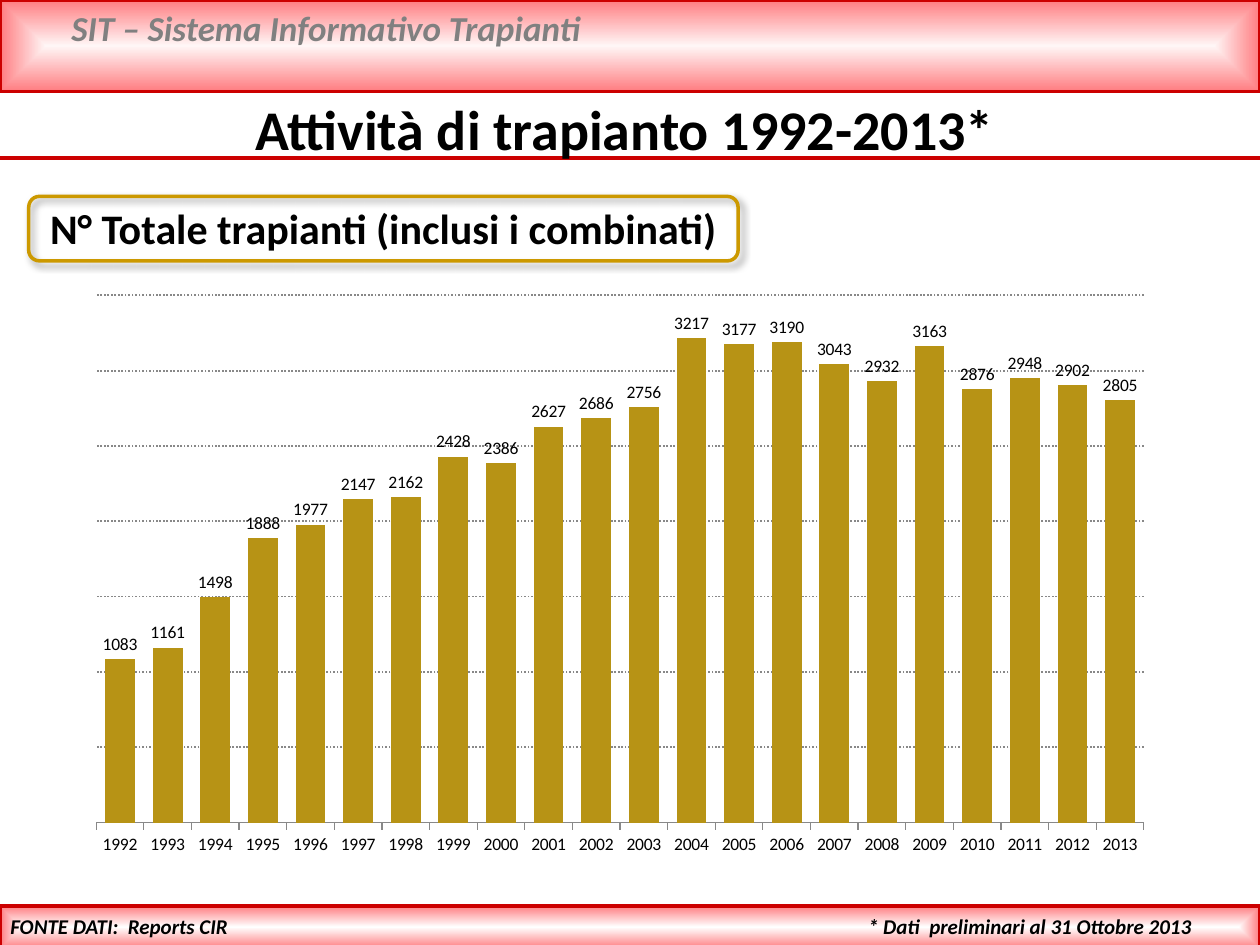
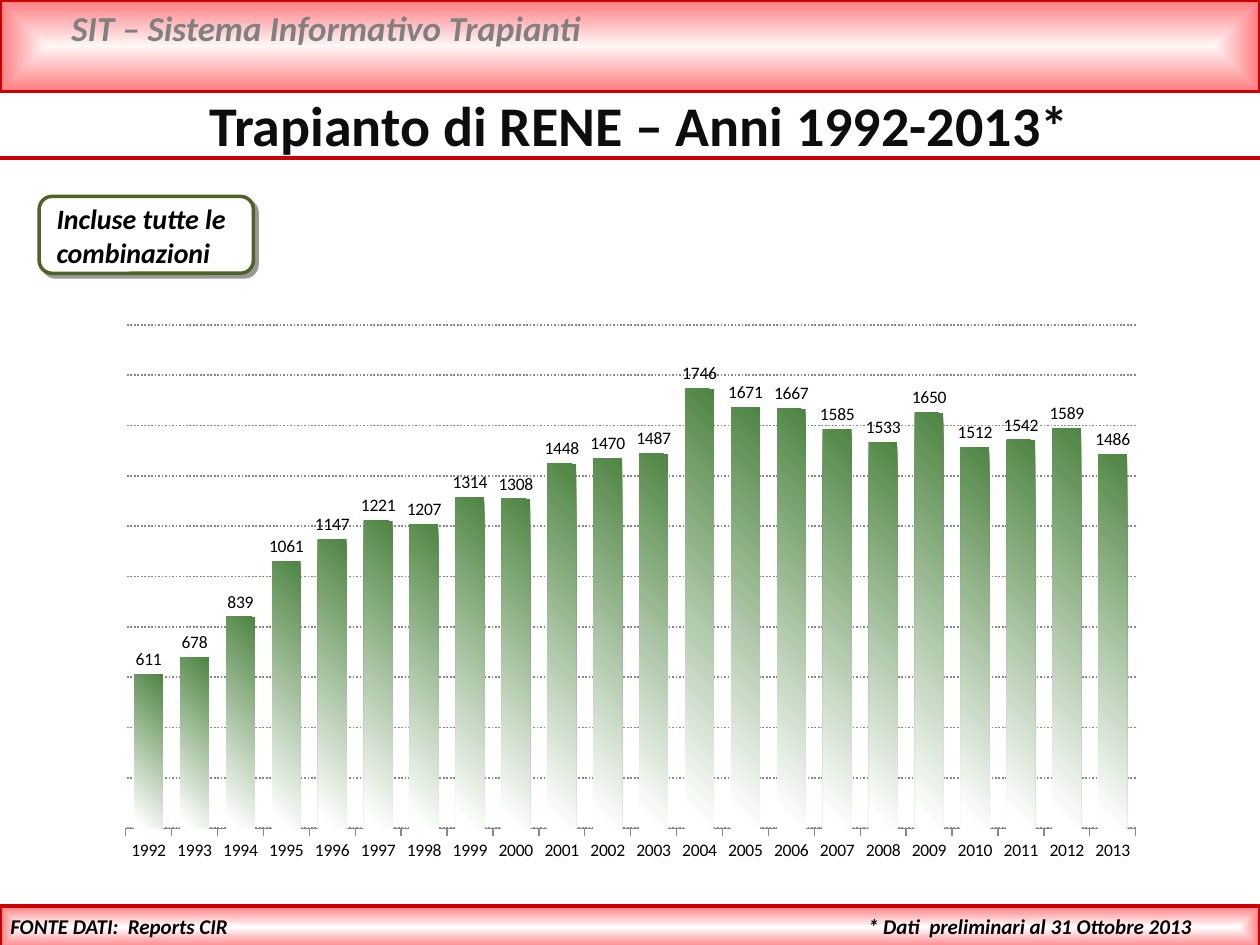
from lxml import etree
from pptx import Presentation
from pptx.chart import data as cd
from pptx.dml.color import RGBColor
from pptx.enum import chart as ch, dml, shapes, text
from pptx.oxml import ns, parse_xml
from pptx.util import Cm, Pt

WIDTH, HEIGHT = 25.4, 19.05
FONT = "Calibri"
RED, ROSE, BLUSH, WHITE = "CC0000", "FF7C80", "FFF6F6", "FFFFFF"
BLACK, INK, GREY, GRID = "000000", "0D0D0D", "808080", "888888"
GOLD, BAR_GOLD, OLIVE, BAR_GREEN = "CC9900", "B79315", "4F6228", "4E8542"
FOOTER_TOP = 18.26
YEARS = [str(year) for year in range(1992, 2014)]
TOTALS = [1083, 1161, 1498, 1888, 1977, 2147, 2162, 2428, 2386, 2627, 2686,
          2756, 3217, 3177, 3190, 3043, 2932, 3163, 2876, 2948, 2902, 2805]
KIDNEYS = [611, 678, 839, 1061, 1147, 1221, 1207, 1314, 1308, 1448, 1470,
           1487, 1746, 1671, 1667, 1585, 1533, 1650, 1512, 1542, 1589, 1486]


def rgb(value):
    return RGBColor.from_string(value)


def cm(box):
    return [Cm(length) for length in box]


def set_line(line, color, width=2):
    line.color.rgb = rgb(color)
    line.width = Pt(width)


def set_gradient(fill, start, end, end_position=1.0):
    fill.gradient()
    for stop, color, position in zip(fill.gradient_stops, (start, end), (0, end_position)):
        stop.color.rgb = rgb(color)
        stop.position = position


def add_text(s, box, words, size, color=BLACK, italic=False, align=None, wrap=True):
    tf = s.shapes.add_textbox(*cm(box)).text_frame
    tf.word_wrap = wrap
    p = tf.paragraphs[0]
    p.text = words
    p.alignment = align
    p.font.name, p.font.size = FONT, Pt(size)
    p.font.bold, p.font.italic = True, italic
    p.font.color.rgb = rgb(color)


def add_band(s, box, center):
    sp = s.shapes.add_shape(shapes.MSO_SHAPE.RECTANGLE, *cm(box))
    sp.shadow.inherit = False
    set_gradient(sp.fill, center, ROSE)
    set_line(sp.line, RED)
    gradient = sp._element.spPr.find(ns.qn("a:gradFill"))
    gradient.replace(gradient.find(ns.qn("a:lin")), parse_xml(
        f'<a:path {ns.nsdecls("a")} path="shape">'
        '<a:fillToRect l="50000" t="50000" r="50000" b="50000"/></a:path>'))


def add_header(s):
    add_band(s, (0, 0, WIDTH, 1.85), BLUSH)
    add_text(s, (1.19, 0, 22.81, 1.12), "SIT – Sistema Informativo Trapianti", 20, GREY, True)
    rule = s.shapes.add_connector(shapes.MSO_CONNECTOR.STRAIGHT, *cm((0, 3.18, WIDTH, 3.18)))
    set_line(rule.line, RED)
    etree.SubElement(rule._element.spPr, ns.qn("a:effectLst"))


def add_footer(s):
    add_band(s, (0, FOOTER_TOP, WIDTH, 0.86), WHITE)
    top = FOOTER_TOP + 0.03
    add_text(s, (17.25, top, 8.15, 0.76), "* Dati  preliminari al 31 Ottobre 2013", 12, italic=True)
    add_text(s, (-0.1, top, 4.95, 0.76), "FONTE DATI:  Reports CIR", 12, italic=True,
             align=text.PP_ALIGN.RIGHT, wrap=False)


def add_frame(s, box, color, fill=None, blur=0):
    sp = s.shapes.add_shape(shapes.MSO_SHAPE.ROUNDED_RECTANGLE, *cm(box))
    sp.shadow.inherit = False
    if fill:
        sp.fill.solid()
        sp.fill.fore_color.rgb = rgb(fill)
    else:
        sp.fill.background()
    set_line(sp.line, color)
    sp._element.spPr.find(ns.qn("a:effectLst")).append(parse_xml(
        f'<a:outerShdw {ns.nsdecls("a")} blurRad="{Pt(blur)}" dist="{Pt(3)}" dir="2700000" '
        f'algn="tl" rotWithShape="0"><a:srgbClr val="{BLACK}"><a:alpha val="40000"/>'
        '</a:srgbClr></a:outerShdw>'))


def add_year_chart(s, box, values, top_value, step):
    data = cd.CategoryChartData()
    data.categories = YEARS
    data.add_series("Trapianti", values)
    chart = s.shapes.add_chart(ch.XL_CHART_TYPE.COLUMN_CLUSTERED, *cm(box), data).chart
    chart.has_title = chart.has_legend = False
    chart.font.name, chart.font.size = FONT, Pt(10)
    chart.font.color.rgb = rgb(BLACK)

    axis = chart.value_axis
    axis.visible = False
    axis.minimum_scale, axis.maximum_scale, axis.major_unit = 0, top_value, step
    axis.has_major_gridlines = True
    grid = axis.major_gridlines.format.line
    set_line(grid, GRID, 1)
    grid.dash_style = dml.MSO_LINE.ROUND_DOT
    years = chart.category_axis
    years.major_tick_mark = ch.XL_TICK_MARK.OUTSIDE
    set_line(years.format.line, GRID, 0.75)

    plot = chart.plots[0]
    plot.gap_width, plot.overlap, plot.vary_by_categories = 60, -20, False
    plot.has_data_labels = True
    plot.data_labels.show_value = True
    plot.data_labels.position = ch.XL_LABEL_POSITION.OUTSIDE_END

    area = chart._chartSpace.find(".//" + ns.qn("c:plotArea"))
    for layout in area.findall(ns.qn("c:layout")):
        area.remove(layout)
    sizes = "".join(f'<c:{key} val="{share}"/>'
                    for key, share in (("x", 0.02), ("y", 0.02), ("w", 0.96), ("h", 0.9)))
    area.insert(0, parse_xml(
        f'<c:layout {ns.nsdecls("c")}><c:manualLayout><c:layoutTarget val="inner"/>'
        f'<c:xMode val="edge"/><c:yMode val="edge"/>{sizes}</c:manualLayout></c:layout>'))
    return plot.series[0].format.fill


def add_slide(prs, title, title_box, color):
    s = prs.slides.add_slide(prs.slide_layouts[6])
    add_header(s)
    add_footer(s)
    add_text(s, title_box, title, 32, color, align=text.PP_ALIGN.CENTER)
    return s


def total_slide(prs):
    s = add_slide(prs, "Attività di trapianto 1992-2013*", (0, 1.78, 25.2, 1.63), BLACK)
    add_frame(s, (0.58, 3.96, 14.3, 1.3), GOLD, blur=4)
    add_text(s, (0.76, 3.96, 14.12, 1.3), "N° Totale trapianti (inclusi i combinati)", 24)
    bars = add_year_chart(s, (1.5, 5.72, 22, 11.81), TOTALS, 3500, 500)
    bars.solid()
    bars.fore_color.rgb = rgb(BAR_GOLD)


def kidney_slide(prs):
    s = add_slide(prs, "Trapianto di RENE – Anni 1992-2013*", (2.77, 1.7, 20.24, 1.63), INK)
    add_frame(s, (0.79, 3.96, 4.32, 1.55), OLIVE, WHITE)
    add_text(s, (0.89, 3.94, 4.19, 1.63), "Incluse tutte le combinazioni", 16, italic=True)
    bars = add_year_chart(s, (2.11, 6.32, 21.21, 11.28), KIDNEYS, 2000, 200)
    set_gradient(bars, BAR_GREEN, WHITE, 0.96)
    bars.gradient_angle = 225


def main():
    prs = Presentation()
    prs.slide_width, prs.slide_height = Cm(WIDTH), Cm(HEIGHT)
    total_slide(prs)
    kidney_slide(prs)
    prs.save("out.pptx")


if __name__ == "__main__":
    main()
